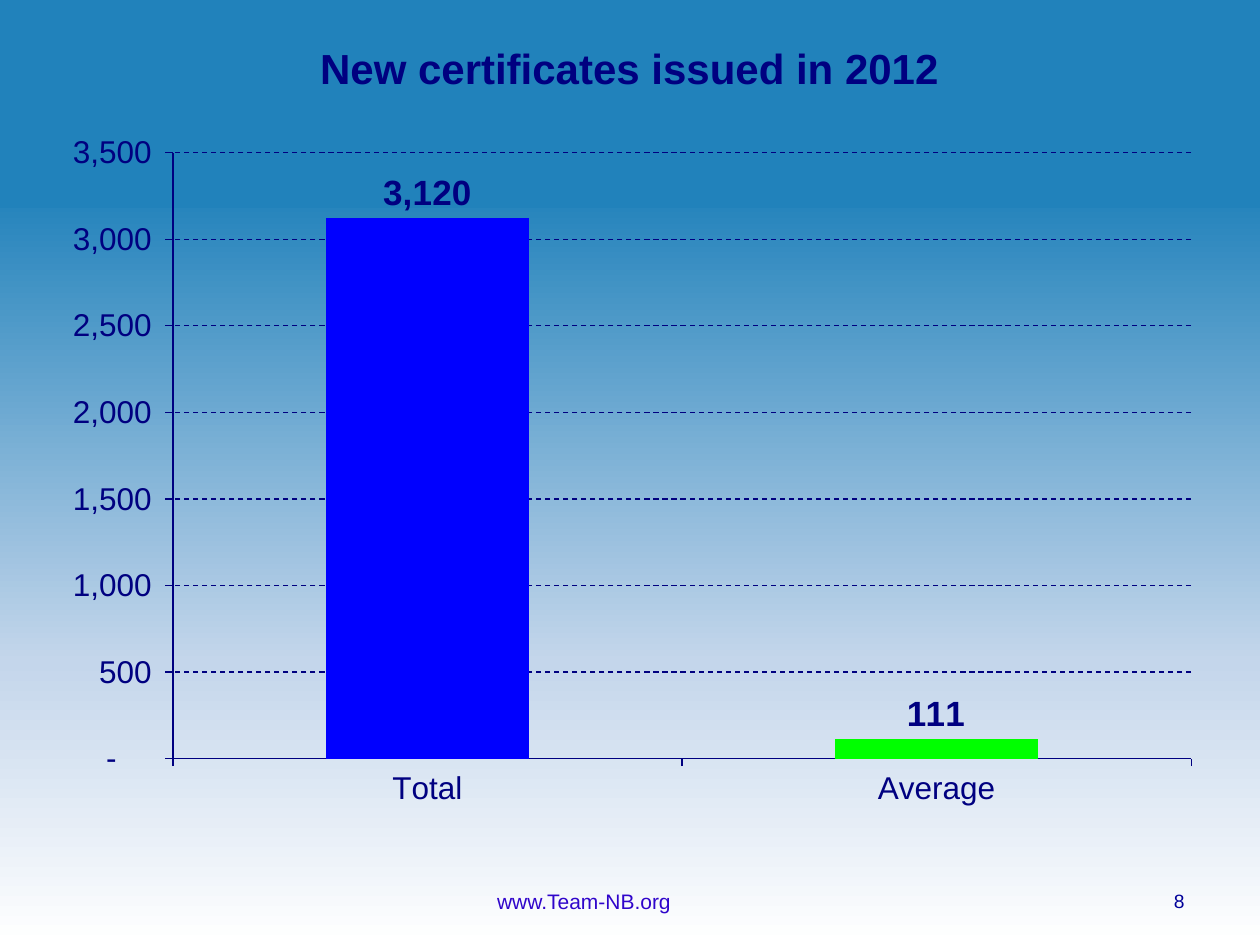
from lxml import etree
from pptx import Presentation
from pptx.chart.data import CategoryChartData
from pptx.dml.color import RGBColor
from pptx.enum.chart import XL_CHART_TYPE, XL_LABEL_POSITION, XL_TICK_MARK
from pptx.enum.dml import MSO_LINE
from pptx.enum.shapes import MSO_SHAPE
from pptx.enum.text import MSO_ANCHOR, PP_ALIGN
from pptx.oxml.ns import qn
from pptx.util import Inches, Pt

COLUMNS = XL_CHART_TYPE.COLUMN_CLUSTERED
OUTSIDE_END = XL_LABEL_POSITION.OUTSIDE_END
TICK_OUT = XL_TICK_MARK.OUTSIDE
DASH = MSO_LINE.DASH
RECTANGLE = MSO_SHAPE.RECTANGLE
MIDDLE = MSO_ANCHOR.MIDDLE
CENTER, RIGHT = PP_ALIGN.CENTER, PP_ALIGN.RIGHT

NAVY = RGBColor(0x00, 0x00, 0x80)
NUMBER_BLUE = RGBColor(0x00, 0x00, 0x99)
LINK_BLUE = RGBColor(0x2F, 0x05, 0xCB)
SKY = RGBColor(0x21, 0x82, 0xBB)
PALE = RGBColor(0xC4, 0xD6, 0xEB)
WHITE = RGBColor(0xFF, 0xFF, 0xFF)
BLUE = RGBColor(0x00, 0x00, 0xFF)
GREEN = RGBColor(0x00, 0xFF, 0x00)
SERIES_BLUE = RGBColor(0x00, 0x70, 0xC0)

ACCOUNTING = '_ * #,##0_ ;_ * \\-#,##0_ ;_ * "-"??_ ;_ '


class SlideBuilder:
    """Holds the slide style and adds each kind of element to the page."""

    font_name = "Arial"

    def __init__(self, deck):
        self.page = deck.slides.add_slide(deck.slide_layouts[5])

    def background(self, stops):
        fill = self.page.background.fill
        fill.gradient()
        fill.gradient_angle = 270
        stop_list = self.page.element.find(".//" + qn("a:gsLst"))
        stop_list.clear()
        for percent, color in stops:
            stop = etree.SubElement(stop_list, qn("a:gs"), pos=str(percent * 1000))
            etree.SubElement(stop, qn("a:srgbClr"), val=str(color))

    def band(self, left, top, width, height, color):
        box = self.page.shapes.add_shape(
            RECTANGLE, Inches(left), Inches(top), Inches(width), Inches(height))
        box.shadow.inherit = False
        box.fill.solid()
        box.fill.fore_color.rgb = color
        box.line.color.rgb = color
        box.line.width = Pt(2)
        self.page.shapes.element.insert(2, box.element)

    def set_text(self, box, text, size, color, align, bold=False):
        frame = box.text_frame
        frame.word_wrap = True
        frame.vertical_anchor = MIDDLE
        para = frame.paragraphs[0]
        para.text = text
        para.alignment = align
        self.style(para.font, size, color, bold)

    def style(self, font, size, color, bold=False):
        font.name = self.font_name
        font.size = Pt(size)
        font.color.rgb = color
        font.bold = bold

    def title(self, text, left, top, width, height):
        box = self.page.shapes.title
        box.left, box.top = Inches(left), Inches(top)
        box.width, box.height = Inches(width), Inches(height)
        self.set_text(box, text, 24, NAVY, CENTER, bold=True)

    def label(self, text, left, top, width, height, size, color, align):
        box = self.page.shapes.add_textbox(
            Inches(left), Inches(top), Inches(width), Inches(height))
        self.set_text(box, text, size, color, align)

    def axis(self, axis):
        axis.major_tick_mark = TICK_OUT
        axis.format.line.color.rgb = NAVY
        axis.format.line.width = Pt(0.75)
        self.style(axis.tick_labels.font, 18, NAVY)

    def plot_layout(self, chart, **fractions):
        area = chart.element.find(".//" + qn("c:plotArea"))
        for old in area.findall(qn("c:layout")):
            area.remove(old)
        layout = etree.Element(qn("c:layout"))
        manual = etree.SubElement(layout, qn("c:manualLayout"))
        settings = {"layoutTarget": "inner", "xMode": "edge", "yMode": "edge"}
        for name, value in {**settings, **fractions}.items():
            etree.SubElement(manual, qn("c:" + name), val=str(value))
        area.insert(0, layout)

    def column_chart(self, values, colors, left, top, width, height):
        data = CategoryChartData(number_format=ACCOUNTING)
        data.categories = list(values)
        data.add_series("Series 1", list(values.values()))
        chart = self.page.shapes.add_chart(
            COLUMNS, Inches(left), Inches(top), Inches(width), Inches(height), data).chart
        chart.has_legend = False
        chart.has_title = False
        self.style(chart.font, 10, NAVY)
        self.plot_layout(chart, x=0.11, y=0.04, w=0.87, h=0.87)

        self.axis(chart.category_axis)
        scale = chart.value_axis
        self.axis(scale)
        scale.minimum_scale, scale.maximum_scale = 0, 3500
        scale.major_unit = 500
        scale.tick_labels.number_format = ACCOUNTING
        scale.tick_labels.number_format_is_linked = False
        grid = scale.major_gridlines.format.line
        grid.color.rgb = NAVY
        grid.width = Pt(0.75)
        grid.dash_style = DASH

        plot = chart.plots[0]
        plot.gap_width = 150
        plot.vary_by_categories = False
        series = plot.series[0]
        series.format.fill.solid()
        series.format.fill.fore_color.rgb = SERIES_BLUE
        for index, color in enumerate(colors):
            fill = series.points[index].format.fill
            fill.solid()
            fill.fore_color.rgb = color

        labels = series.data_labels
        labels.show_value = True
        labels.position = OUTSIDE_END
        labels.number_format = ACCOUNTING
        labels.number_format_is_linked = False
        self.style(labels.font, 20, NAVY, bold=True)


def main():
    deck = Presentation()
    deck.slide_width, deck.slide_height = Inches(10), Inches(7.5)
    builder = SlideBuilder(deck)
    builder.background([(20, SKY), (70, PALE), (100, WHITE)])
    builder.band(0, 0, 10, 1.64, SKY)
    builder.label("8", 7.17, 6.95, 2.33, 0.4, 11, NUMBER_BLUE, RIGHT)
    builder.label("www.Team-NB.org", 3.05, 6.95, 3.17, 0.4, 12, LINK_BLUE, CENTER)
    builder.column_chart(
        {"Total": 3120, "Average": 111}, [BLUE, GREEN], 0.35, 0.99, 9.29, 5.53)
    builder.title("New certificates issued in 2012", 0.35, 0.29, 9.29, 0.5)
    deck.save("out.pptx")


if __name__ == "__main__":
    main()
